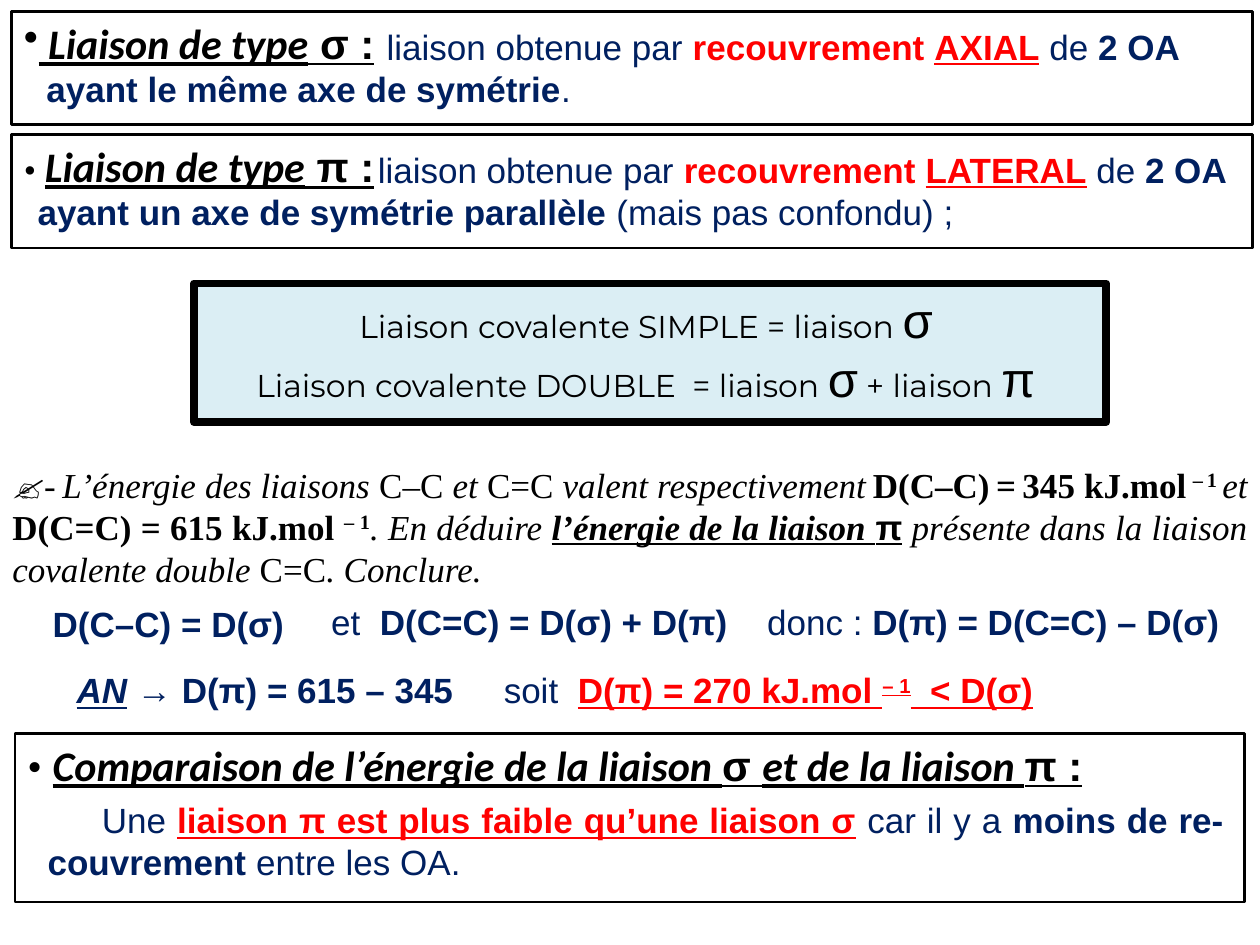
from pptx import Presentation
from pptx.dml.color import RGBColor as Rgb
from pptx.enum.shapes import MSO_SHAPE as Form
from pptx.enum.text import MSO_ANCHOR as Anchor, MSO_AUTO_SIZE as Fit, PP_ALIGN as Align
from pptx.util import Inches, Pt
from lxml import etree

INK = {"black": "000000", "navy": "002060", "red": "FF0000",
       "white": "FFFFFF", "pale": "DBEEF4"}
FONT = {"A": "Arial", "C": "Calibri", "M": "Montserrat", "T": "Times New Roman"}

deck = Presentation()
deck.slide_width, deck.slide_height = Inches(10), Inches(7.5)
slide = deck.slides.add_slide(deck.slide_layouts[6])
# Grid of 100 columns by 75 rows
COL, ROW = deck.slide_width / 100, deck.slide_height / 75


def place(x, y, w, h, fill=None, line=1.5):
    """Add a framed box, or a plain text box when there is no fill."""
    area = [round(v) for v in (x * COL, y * ROW, w * COL, h * ROW)]
    if fill:
        box = slide.shapes.add_shape(Form.RECTANGLE, *area)
        box.shadow.inherit = False
        box.fill.solid()
        box.fill.fore_color.rgb = Rgb.from_string(INK[fill])
        box.line.color.rgb = Rgb.from_string(INK["black"])
        box.line.width = Pt(line)
    else:
        box = slide.shapes.add_textbox(*area)
    frame = box.text_frame
    frame.word_wrap = True
    frame.vertical_anchor = Anchor.TOP
    return frame


def write(para, runs, align=Align.LEFT, after=10, indent=0):
    """Add runs; a style reads: font, size, colour, then flags b i u ^."""
    para.alignment = align
    para.space_after = Pt(after)
    if indent:
        para._p.get_or_add_pPr().set("indent", str(round(indent * COL)))
    for text, style in runs:
        face, size, ink, *flags = style.split()
        flags = "".join(flags)
        run = para.add_run()
        run.text = text
        font = run.font
        font.name, font.size = FONT[face], Pt(int(size))
        font.color.rgb = Rgb.from_string(INK[ink])
        font.bold, font.italic, font.underline = [f in flags for f in "biu"]
        if "^" in flags:
            run._r.get_or_add_rPr().set("baseline", "30000")


# Text styles
HEAD, SIGN, DOT = "C 24 black biu", "A 24 black bu", "T 24 black"
BLUE, BOLD = "A 20 navy", "A 20 navy b"
RED, MARK = "A 20 red b", "A 20 red bu"
ASK, TERM, VALUE, POWER = "T 20 black i", "T 20 black", "T 20 black b", "T 20 black b^"
THIN, TINY = "M 18 black", "T 14 black"
GREEK = "A 28 black"

# Comparison box
para = place(1.2, 58.2, 97.6, 13.4, "white").paragraphs[0]
write(para, [("• ", DOT), ("Comparaison de l’énergie de la liaison ", HEAD), ("σ ", SIGN),
             ("et de la liaison ", HEAD), ("π :", SIGN)], Align.JUSTIFY)
para = place(2.8, 62.9, 95.3, 7.7).paragraphs[0]
write(para, [("Une ", BLUE), ("liaison π est plus faible qu’une liaison σ", MARK), (" ", BOLD),
             ("car il y a ", BLUE), ("moins de re-couvrement ", BOLD),
             ("entre les OA.", BLUE)], Align.JUSTIFY, 0, indent=4.3)

# Definitions of the sigma and pi bonds
bonds = [
    (0.9, 2.7, [(" Liaison de type", HEAD), (" σ :", SIGN)],
     "AXIAL", "2 OA ayant le même axe de symétrie", "."),
    (10.7, 2, [("• ", "T 20 black"), ("Liaison de type", HEAD), (" π :", SIGN)],
     "LATERAL", "2 OA ayant un axe de symétrie parallèle", " (mais pas confondu) ;"),
]
for top, left, title, kind, axis, end in bonds:
    para = place(0.9, top, 98.5, 9, "white").paragraphs[0]
    write(para, title, Align.JUSTIFY)
    if not title[0][0].startswith("•"):
        dot = etree.SubElement(
            para._p.get_or_add_pPr(),
            "{http://schemas.openxmlformats.org/drawingml/2006/main}buChar")
        dot.set("char", "•")
    para = place(left, top + 0.6, 98, 8.7).paragraphs[0]
    write(para, [("liaison obtenue par ", BLUE), ("recouvrement ", RED), (kind, MARK),
                 (" ", RED), ("de ", BLUE), (axis, BOLD), (end, BLUE)], indent=27)

# Summary of single and double bonds
frame = place(15.4, 22.5, 72.4, 11, "pale", 4.5)
write(frame.paragraphs[0], [("Liaison covalente SIMPLE = liaison ", THIN), ("σ", GREEK),
                            (" ", THIN)], Align.CENTER, 0)
write(frame.add_paragraph(), [("Liaison covalente DOUBLE  = liaison ", THIN), ("σ", GREEK),
                              (" + liaison ", THIN), ("π", GREEK),
                              (" ", "T 20 black i")], Align.CENTER, 0)

# Question
frame = place(0, 36.2, 100, 11.1)
frame.vertical_anchor = Anchor.MIDDLE
frame.auto_size = Fit.SHAPE_TO_FIT_TEXT
write(frame.paragraphs[0], [
    ("✍-", TERM), (" ", TINY), ("L’énergie des liaisons ", ASK), ("C–C", TERM), (" et ", ASK),
    ("C=C", TERM), (" valent respectivement", ASK), (" ", TINY + " i"), ("D(C–C)", VALUE),
    (" ", TINY + " b"), ("=", VALUE), (" ", TINY + " bi"), ("345 kJ.mol", VALUE),
    (" ", TINY + " b"), ("–", POWER), (" ", TINY + " b^"), ("1 ", POWER), ("et ", ASK),
    ("D(C=C) = 615 kJ.mol ", VALUE), ("– 1", POWER), (". En déduire ", ASK),
    ("l’énergie de la liaison ", "T 20 black biu"), ("π", "A 20 black bu"),
    (" présente dans la liaison covalente double ", ASK), ("C=C", TERM),
    (". Conclure.", ASK)], Align.JUSTIFY, 0)

# Worked answer: left, top, width, first-line indent, runs
steps = [
    (3.2, 47.3, 25.6, 0, [("D(C–C) = D(σ)", BOLD)]),
    (24.8, 47.2, 34.6, 0.5, [("et  ", BLUE), ("D(C=C) = D(σ) + D(π)", BOLD)]),
    (59.4, 47.2, 38.6, 0.5, [("donc : ", BLUE), ("D(π) = D(C=C) – D(σ)", BOLD)]),
    (5.1, 52.6, 38.6, 0, [("AN", "A 20 navy biu"), (" → ", BLUE), ("D(π) = 615 – 345", BOLD)]),
    (39, 52.6, 48, 0, [("soit  ", BLUE), ("D(π) = 270 kJ.mol ", MARK),
                       ("– 1", MARK + "^"), ("  < D(σ)", MARK)]),
]
for x, y, w, shift, runs in steps:
    write(place(x, y, w, 4.1).paragraphs[0], runs, indent=shift)

deck.save("out.pptx")
